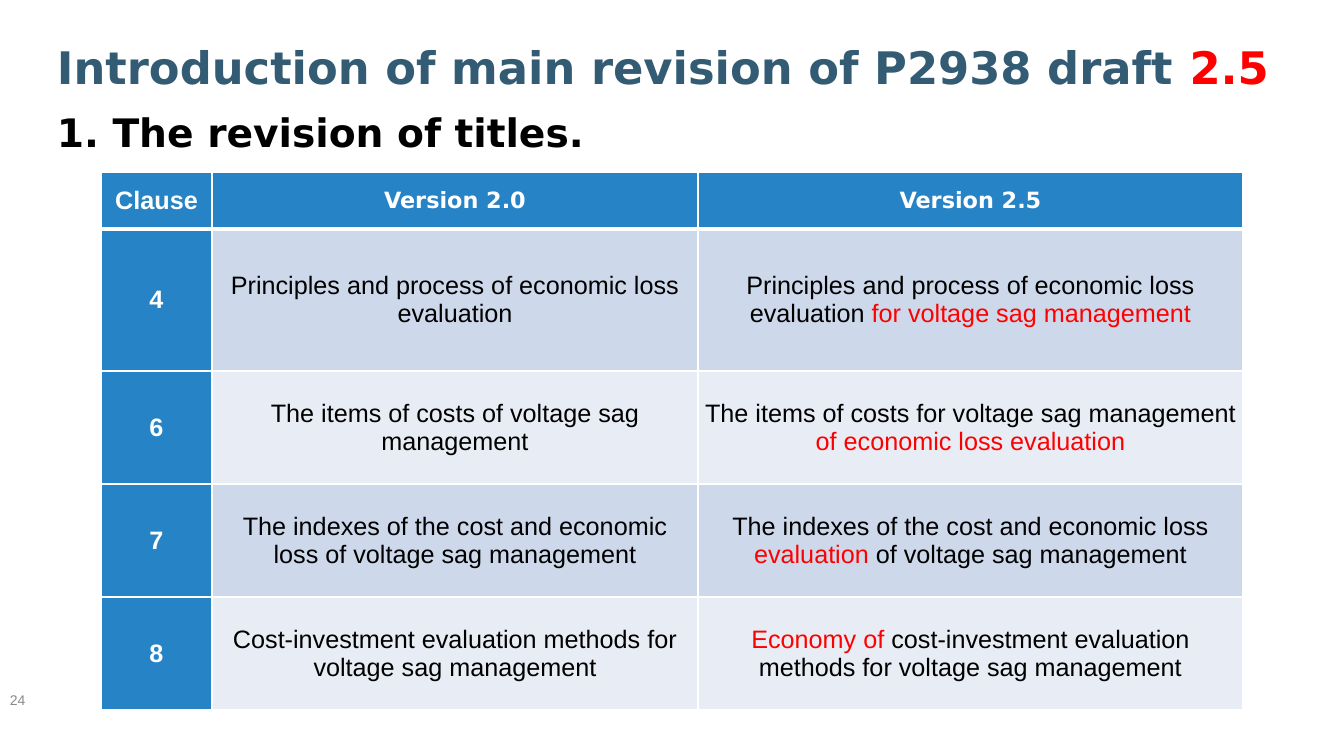
from lxml import etree
from pptx import Presentation, util as u
from pptx.dml.color import RGBColor
from pptx.enum import text
from pptx.oxml.ns import qn

PX = 914400 / 100.8  # EMU per pixel
SANS, DISPLAY = "Arial", "DejaVu Sans"
WHITE, BLACK, RED, BLUE = "FFFFFF", "000000", "FF0000", "2683C6"
BANDS = ["CDD9EA", "E8EDF5"]


def px(value):
    return u.Emu(round(value * PX))


def add_runs(paragraph, runs, size, font, bold=False):
    for words, color in runs:
        run = paragraph.add_run()
        run.text = words
        run.font.size = u.Pt(size)
        run.font.name = font
        run.font.bold = bold
        run.font.color.rgb = RGBColor.from_string(color)


presentation = Presentation()
presentation.slide_width, presentation.slide_height = px(1344), px(756)
slide = presentation.slides.add_slide(presentation.slide_layouts[6])

# Title, subtitle and page number
text_boxes = [
    ((47, 35, 1259, 60), 32, DISPLAY, True, text.MSO_ANCHOR.TOP,
     [("Introduction of main revision of P2938 draft ", "335B74"), ("2.5", RED)]),
    ((47, 103, 798, 57), 28, DISPLAY, True, text.MSO_ANCHOR.TOP,
     [("1. The revision of titles.", BLACK)]),
    ((0, 680, 101, 40), 10, SANS, False, text.MSO_ANCHOR.MIDDLE,
     [("24", "898989")]),
]
for place, size, font, bold, anchor, runs in text_boxes:
    frame = slide.shapes.add_textbox(*map(px, place)).text_frame
    frame.word_wrap = True
    frame.vertical_anchor = anchor
    add_runs(frame.paragraphs[0], runs, size, font, bold)

# Table of revised titles
header = ["Clause", "Version 2.0", "Version 2.5"]
revisions = [
    ("4", "Principles and process of economic loss evaluation",
     [("Principles and process of economic loss evaluation ", BLACK),
      ("for voltage sag management", RED)]),
    ("6", "The items of costs of voltage sag management",
     [("The items of costs for voltage sag management ", BLACK),
      ("of economic loss evaluation", RED)]),
    ("7", "The indexes of the cost and economic loss of voltage sag management",
     [("The indexes of the cost and economic loss ", BLACK),
      ("evaluation", RED),
      (" of voltage sag management", BLACK)]),
    ("8", "Cost-investment evaluation methods for voltage sag management",
     [("Economy of ", RED),
      ("cost-investment evaluation methods for voltage sag management", BLACK)]),
]
rows = [[[(label, WHITE)] for label in header]]
for clause, old_title, new_title in revisions:
    rows.append([[(clause, WHITE)], [(old_title, BLACK)], new_title])

column_widths = [111, 486, 545]
row_heights = [57, 142, 113, 113, 113]
table = slide.shapes.add_table(
    len(rows), len(header), px(101), px(172),
    px(sum(column_widths)), px(sum(row_heights))).table
for column, width in zip(table.columns, column_widths):
    column.width = px(width)
for row, height in zip(table.rows, row_heights):
    row.height = px(height)

for row_index, row in enumerate(rows):
    for column_index, runs in enumerate(row):
        cell = table.cell(row_index, column_index)
        is_header = row_index == 0
        is_label = is_header or column_index == 0
        cell.margin_left = cell.margin_right = px(7)
        cell.margin_top = cell.margin_bottom = 0
        cell.vertical_anchor = text.MSO_ANCHOR.MIDDLE

        # Text
        paragraph = cell.text_frame.paragraphs[0]
        paragraph.alignment = text.PP_ALIGN.CENTER
        is_version = is_header and column_index > 0
        size, font = (16, DISPLAY) if is_version else (18, SANS)
        add_runs(paragraph, runs, size, font, is_label)

        # White borders, thicker below the header
        properties = cell._tc.get_or_add_tcPr()
        for side in ("L", "R", "T", "B"):
            under_header = (row_index, side) in ((0, "B"), (1, "T"))
            line = etree.SubElement(properties, qn(f"a:ln{side}"),
                                    w=str(u.Pt(3 if under_header else 1)))
            line_fill = etree.SubElement(line, qn("a:solidFill"))
            etree.SubElement(line_fill, qn("a:srgbClr"), val=WHITE)

        # Fill
        cell.fill.solid()
        fill_color = BLUE if is_label else BANDS[(row_index - 1) % 2]
        cell.fill.fore_color.rgb = RGBColor.from_string(fill_color)

presentation.save("out.pptx")
